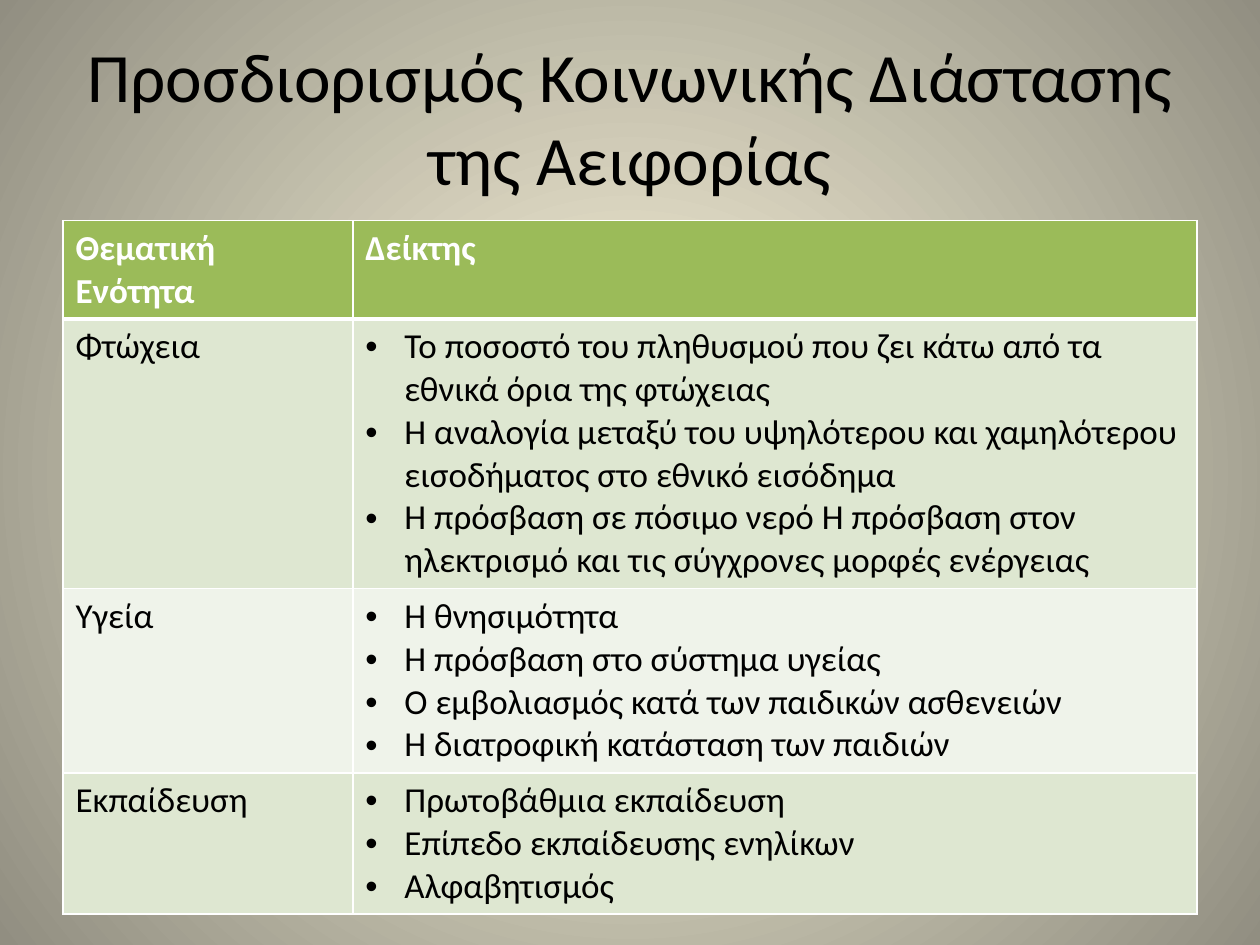
from lxml import etree
from pptx import Presentation, util as u
from pptx.dml.color import RGBColor
from pptx.enum import text
from pptx.oxml import ns

FONT = "Calibri"
BLACK, WHITE, GREEN = "000000", "FFFFFF", "9BBB59"
BANDS = ["DEE7D1", "EFF3EA"]
LINE_HEIGHT, CELL_PADDING = 0.34, 0.1
COLUMN_WIDTHS = [2.3, 6.7]
HEADINGS = ["Θεματική Ενότητα", "Δείκτης"]
TOPICS = [
    ("Φτώχεια", [
        "Το ποσοστό του πληθυσμού που ζει κάτω από τα εθνικά όρια της φτώχειας",
        "Η αναλογία μεταξύ του υψηλότερου και χαμηλότερου εισοδήματος στο εθνικό εισόδημα",
        "Η πρόσβαση σε πόσιμο νερό Η πρόσβαση στον ηλεκτρισμό και τις σύγχρονες μορφές ενέργειας",
    ]),
    ("Υγεία", [
        "Η θνησιμότητα",
        "Η πρόσβαση στο σύστημα υγείας",
        "Ο εμβολιασμός κατά των παιδικών ασθενειών",
        "Η διατροφική κατάσταση των παιδιών",
    ]),
    ("Εκπαίδευση", [
        "Πρωτοβάθμια εκπαίδευση",
        "Επίπεδο εκπαίδευσης ενηλίκων",
        "Αλφαβητισμός",
    ]),
]
ROW_LINES = [2, 6, 4, 3]


def color(value):
    return RGBColor.from_string(value)


def add_element(parent, tag, **attributes):
    return etree.SubElement(parent, ns.qn(tag), attributes)


def format_font(font, value, **formats):
    for name, setting in {"name": FONT, **formats}.items():
        setattr(font, name, setting)
    font.color.rgb = color(value)


def paint_background(slide, center, edge):
    """Fill the background with a circular gradient from center to edge."""
    fill = slide.background.fill
    fill.gradient()
    for stop, position, value in zip(fill.gradient_stops, [0, 1], [center, edge]):
        stop.position = position
        stop.color.rgb = color(value)
    linear = slide._element.xpath(".//p:bg//a:lin")[0]
    gradient = linear.getparent()
    gradient.remove(linear)
    circle = add_element(gradient, "a:path", path="circle")
    add_element(circle, "a:fillToRect", l="50000", t="50000", r="50000", b="50000")


def place_title(slide, box, wording):
    title = slide.shapes.title
    title.left, title.top, title.width, title.height = map(u.Inches, box)
    frame = title.text_frame
    for name, setting in {"text": wording, "word_wrap": True,
                          "auto_size": text.MSO_AUTO_SIZE.NONE,
                          "vertical_anchor": text.MSO_ANCHOR.MIDDLE}.items():
        setattr(frame, name, setting)
    paragraph = frame.paragraphs[0]
    paragraph.alignment = text.PP_ALIGN.CENTER
    format_font(paragraph.runs[0].font, BLACK, size=u.Pt(39.6))


def add_bullet(paragraph):
    properties = paragraph._p.get_or_add_pPr()
    indent = u.Inches(0.31)
    properties.set("marL", str(indent))
    properties.set("indent", str(-indent))
    add_element(properties, "a:buFont", typeface="Arial")
    add_element(properties, "a:buChar", char="•")


def draw_borders(cell, bottom_width):
    properties = cell._tc.get_or_add_tcPr()
    widths = {"a:lnL": 1, "a:lnR": 1, "a:lnT": 1, "a:lnB": bottom_width}
    for index, (tag, width) in enumerate(widths.items()):
        line = add_element(properties, tag, w=str(u.Pt(width)))
        fill = add_element(line, "a:solidFill")
        add_element(fill, "a:srgbClr", val=WHITE)
        properties.insert(index, line)


def fill_cell(cell, lines, fill, ink, bold=False, bulleted=False, bottom_width=1):
    cell.fill.solid()
    cell.fill.fore_color.rgb = color(fill)
    draw_borders(cell, bottom_width)
    cell.text_frame.text = "\n".join(lines)
    for paragraph in cell.text_frame.paragraphs:
        if bulleted:
            add_bullet(paragraph)
        format_font(paragraph.runs[0].font, ink, size=u.Pt(20), bold=bold)


def place_indicator_table(slide, left, top):
    heights = [lines * LINE_HEIGHT + CELL_PADDING for lines in ROW_LINES]
    box = [left, top, sum(COLUMN_WIDTHS), sum(heights)]
    table = slide.shapes.add_table(len(heights), len(COLUMN_WIDTHS),
                                   *map(u.Inches, box)).table
    for column, width in zip(table.columns, COLUMN_WIDTHS):
        column.width = u.Inches(width)
    for row, height in zip(table.rows, heights):
        row.height = u.Inches(height)
    for index, heading in enumerate(HEADINGS):
        fill_cell(table.cell(0, index), [heading], GREEN, WHITE, bold=True, bottom_width=3)
    for row, (topic, indicators) in enumerate(TOPICS, start=1):
        band = BANDS[(row - 1) % 2]
        fill_cell(table.cell(row, 0), [topic], band, BLACK)
        fill_cell(table.cell(row, 1), indicators, band, BLACK, bulleted=True)


def main():
    presentation = Presentation()
    presentation.slide_width, presentation.slide_height = u.Inches(10), u.Inches(7.5)
    slide = presentation.slides.add_slide(presentation.slide_layouts.get_by_name("Title Only"))
    paint_background(slide, "FCF7DD", "918E81")
    place_title(slide, [0.5, 0.3, 9, 1.25], "Προσδιορισμός Κοινωνικής Διάστασης της Αειφορίας")
    place_indicator_table(slide, 0.5, 1.75)
    presentation.save("out.pptx")


if __name__ == "__main__":
    main()
